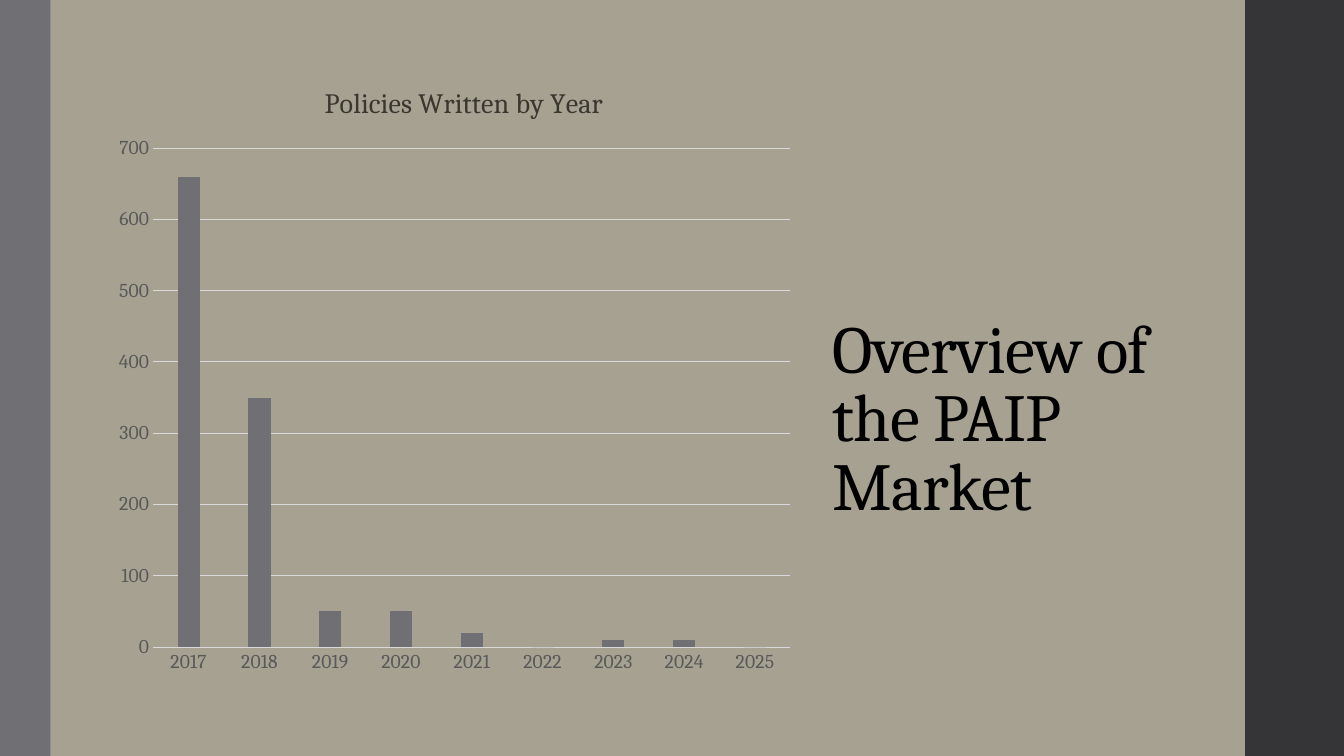
from lxml import etree
from pptx import Presentation
from pptx.chart.data import CategoryChartData
from pptx.dml.color import RGBColor
from pptx.enum.chart import XL_CHART_TYPE as ChartType, XL_TICK_MARK as TickMark
from pptx.enum.shapes import MSO_SHAPE as Shape
from pptx.enum.text import MSO_ANCHOR as Anchor, MSO_AUTO_SIZE as AutoSize, PP_ALIGN as Align
from pptx.oxml.ns import qn
from pptx.util import Inches, Pt

FONT = "Cambria"
BACKGROUND = RGBColor(0xA7, 0xA1, 0x92)
DARK = RGBColor(0x35, 0x35, 0x37)
GRAY = RGBColor(0x6F, 0x6F, 0x74)
GRID = RGBColor(0xD9, 0xD9, 0xD9)
AXIS_TEXT = RGBColor(0x59, 0x59, 0x59)
CHART_TITLE = RGBColor(0x3A, 0x37, 0x2F)
BLACK = RGBColor(0, 0, 0)

POLICIES_BY_YEAR = {
    "2017": 660, "2018": 350, "2019": 50, "2020": 50, "2021": 20,
    "2022": 0, "2023": 10, "2024": 10, "2025": 0,
}


def style_font(font, size, color):
    font.name = FONT
    font.size = Pt(size)
    font.bold = False
    font.color.rgb = color


def style_line(line, color):
    line.color.rgb = color
    line.width = Pt(0.75)


def add_band(slide, left, width, color):
    """Add a full-height vertical band."""
    band = slide.shapes.add_shape(Shape.RECTANGLE, Inches(left), 0, Inches(width), Inches(7.5))
    band.shadow.inherit = False
    band.fill.solid()
    band.fill.fore_color.rgb = color
    band.line.fill.background()


def set_title(slide, text, left, top, width, height):
    title = slide.shapes.title
    title.left, title.top = Inches(left), Inches(top)
    title.width, title.height = Inches(width), Inches(height)
    frame = title.text_frame
    frame.text = text
    frame.word_wrap = True
    frame.auto_size = AutoSize.NONE
    frame.vertical_anchor = Anchor.BOTTOM
    paragraph = frame.paragraphs[0]
    paragraph.alignment = Align.LEFT
    paragraph.line_spacing = 0.85
    style_font(paragraph.font, 48, BLACK)
    paragraph.runs[0].font._element.set("spc", "-50")


def set_layout(part, position, **settings):
    """Place a chart part by hand; lengths are fractions of the chart's size."""
    for old_layout in part.findall(qn("c:layout")):
        part.remove(old_layout)
    layout = etree.Element(qn("c:layout"))
    manual = etree.SubElement(layout, qn("c:manualLayout"))
    for name, value in settings.items():
        etree.SubElement(manual, qn(f"c:{name}")).set("val", str(value))
    part.insert(position, layout)


def add_policies_chart(slide, left, top, width, height):
    data = CategoryChartData()
    data.categories = list(POLICIES_BY_YEAR)
    data.add_series("Series 1", list(POLICIES_BY_YEAR.values()))
    chart = slide.shapes.add_chart(
        ChartType.COLUMN_CLUSTERED,
        Inches(left), Inches(top), Inches(width), Inches(height), data,
    ).chart
    style_font(chart.font, 10, BLACK)
    chart.has_legend = False

    chart.has_title = True
    title_frame = chart.chart_title.text_frame
    title_frame.text = "Policies Written by Year"
    style_font(title_frame.paragraphs[0].font, 20, CHART_TITLE)
    chart.chart_title.include_in_layout = False
    set_layout(chart.chart_title._element, 1, xMode="edge", yMode="edge",
               x=2.14 / width, y=0.15 / height)
    set_layout(chart._chartSpace.chart.plotArea, 0,
               layoutTarget="inner", xMode="edge", yMode="edge",
               x=0.49 / width, y=0.83 / height, w=6.32 / width, h=4.95 / height)

    for axis in (chart.category_axis, chart.value_axis):
        axis.major_tick_mark = axis.minor_tick_mark = TickMark.NONE
        style_font(axis.tick_labels.font, 14, AXIS_TEXT)
    style_line(chart.category_axis.format.line, GRID)
    values = chart.value_axis
    values.minimum_scale, values.maximum_scale, values.major_unit = 0, 700, 100
    values.format.line.fill.background()
    style_line(values.major_gridlines.format.line, GRID)

    plot = chart.plots[0]
    plot.vary_by_categories = False
    plot.gap_width = 219
    plot.overlap = -27
    fill = plot.series[0].format.fill
    fill.solid()
    fill.fore_color.rgb = GRAY


def build_overview_slide(presentation):
    slide = presentation.slides.add_slide(presentation.slide_layouts[5])
    slide.background.fill.solid()
    slide.background.fill.fore_color.rgb = BACKGROUND
    add_band(slide, 12.35, 1, DARK)
    add_band(slide, 0, 0.5, GRAY)
    set_title(slide, "Overview of the PAIP Market", 8.16, 0.83, 3.52, 4.42)
    add_policies_chart(slide, 1.03, 0.64, 6.94, 6.17)


def main():
    presentation = Presentation()
    presentation.slide_width = Inches(13.33)
    presentation.slide_height = Inches(7.5)
    build_overview_slide(presentation)
    presentation.save("out.pptx")


if __name__ == "__main__":
    main()
